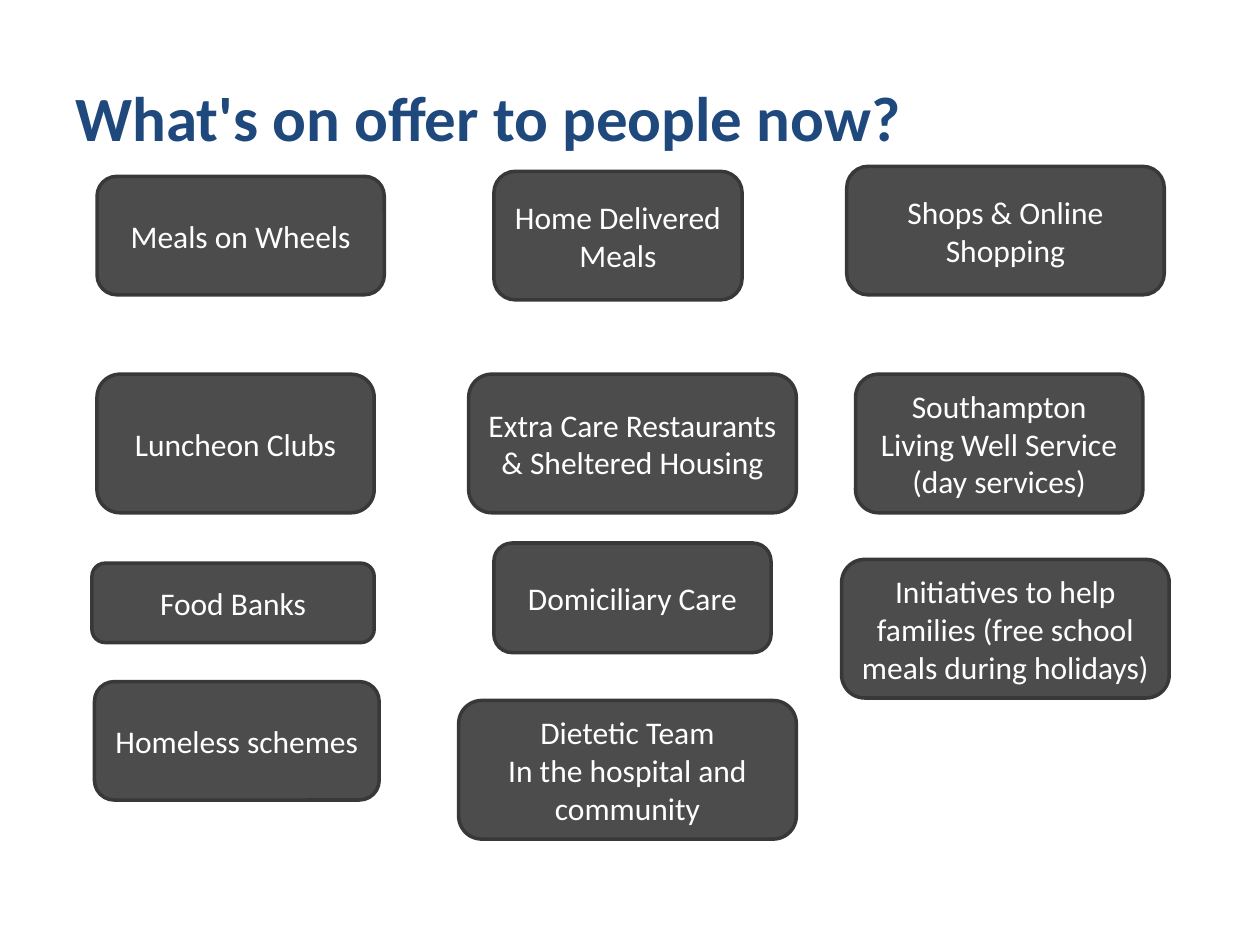
from pptx import Presentation
from pptx.dml.color import RGBColor
from pptx.enum.shapes import MSO_SHAPE
from pptx.enum.text import MSO_ANCHOR, PP_ALIGN
from pptx.util import Inches, Pt

COLORS = {"title": "1F497D", "box": "4C4C4C", "outline": "383838", "label": "FFFFFF"}
TITLE_FONT = {"name": "Calibri", "size": Pt(36), "bold": True}
LABEL_FONT = {"name": "Calibri", "size": Pt(18), "bold": False}

# left, top, width, height in inches, then the lines of the label
SERVICES = [
    (0.77, 1.40, 2.28, 0.94, ["Meals on Wheels"]),
    (3.92, 1.36, 1.97, 1.02, ["Home Delivered Meals"]),
    (0.77, 2.97, 2.20, 1.10, ["Luncheon Clubs"]),
    (3.72, 2.97, 2.60, 1.10, ["Extra Care Restaurants", "& Sheltered Housing"]),
    (6.79, 2.97, 2.28, 1.10, ["Southampton Living Well Service", "(day services)"]),
    (0.73, 4.47, 2.24, 0.63, ["Food Banks"]),
    (3.92, 4.31, 2.20, 0.87, ["Domiciliary Care"]),
    (6.68, 4.44, 2.60, 1.10,
     ["Initiatives to help families (free school meals during holidays)"]),
    (6.72, 1.32, 2.52, 1.02, ["Shops & Online Shopping"]),
    (0.75, 5.41, 2.26, 0.94, ["Homeless schemes"]),
    (3.64, 5.56, 2.68, 1.10, ["Dietetic Team", "In the hospital and community"]),
]


def write_text(shape, lines, font_format, color, alignment):
    frame = shape.text_frame
    frame.word_wrap = True
    frame.vertical_anchor = MSO_ANCHOR.MIDDLE
    frame.text = "\n".join(lines)
    for paragraph in frame.paragraphs:
        paragraph.alignment = alignment
        for run in paragraph.runs:
            for attribute, value in font_format.items():
                setattr(run.font, attribute, value)
            run.font.color.rgb = RGBColor.from_string(COLORS[color])


presentation = Presentation()
presentation.slide_width = Inches(10)
presentation.slide_height = Inches(7.5)
slide = presentation.slides.add_slide(presentation.slide_layouts[6])

title = slide.shapes.add_textbox(Inches(0.5), Inches(0.3), Inches(9), Inches(1.25))
write_text(title, ["What's on offer to people now?"], TITLE_FONT, "title", PP_ALIGN.LEFT)

for *box, lines in SERVICES:
    shape = slide.shapes.add_shape(MSO_SHAPE.ROUNDED_RECTANGLE, *map(Inches, box))
    shape.shadow.inherit = False
    shape.fill.solid()
    shape.fill.fore_color.rgb = RGBColor.from_string(COLORS["box"])
    shape.line.color.rgb = RGBColor.from_string(COLORS["outline"])
    shape.line.width = Pt(2)
    write_text(shape, lines, LABEL_FONT, "label", PP_ALIGN.CENTER)

presentation.save("out.pptx")
